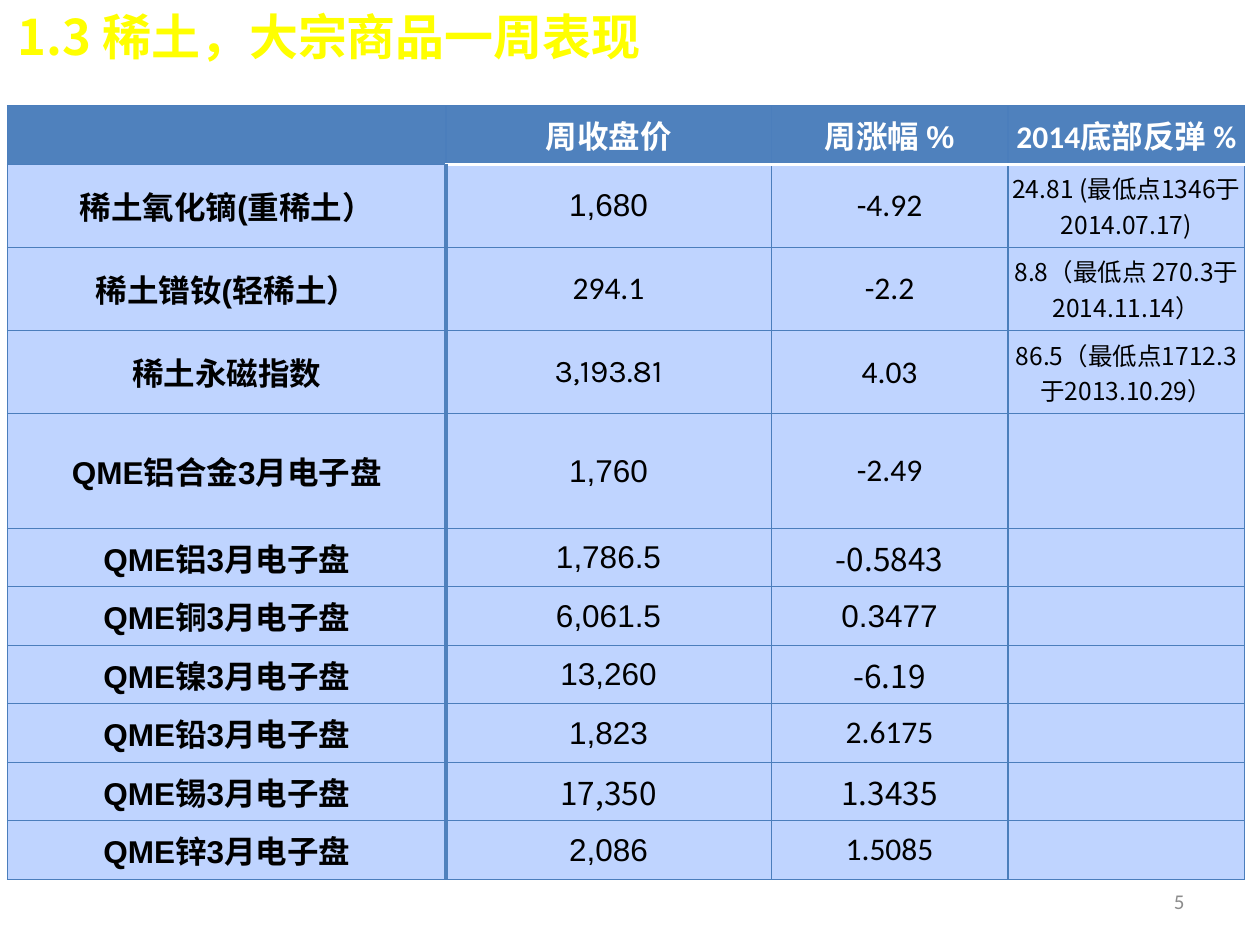
from dataclasses import dataclass
from typing import Optional

from lxml import etree
from pptx import Presentation
from pptx.dml.color import RGBColor
from pptx.enum.text import MSO_ANCHOR, PP_ALIGN
from pptx.oxml.ns import qn
from pptx.util import Inches, Pt

MIDDLE, TOP = MSO_ANCHOR.MIDDLE, MSO_ANCHOR.TOP
LEFT, CENTER, RIGHT = PP_ALIGN.LEFT, PP_ALIGN.CENTER, PP_ALIGN.RIGHT

WHITE = RGBColor(0xFF, 0xFF, 0xFF)
BLACK = RGBColor(0, 0, 0)
YELLOW = RGBColor(0xFF, 0xFF, 0)
GRAY = RGBColor(0x8C, 0x8C, 0x8C)
HEADER_BLUE = RGBColor(0x4F, 0x81, 0xBD)
GRID_BLUE = RGBColor(0x4B, 0x7E, 0xBC)
BODY_BLUE = RGBColor(0xBF, 0xD4, 0xFF)

ARIAL, CALIBRI, KARLA, NOTO = "Arial", "Calibri", "Karla", "Noto Sans CJK SC"

TABLE_LEFT, TABLE_TOP, TABLE_HEIGHT = 0.06, 0.84, 6.14
COLUMN_WIDTHS = (3.48, 2.58, 1.88, 1.88)
NOTE_ROW, ALLOY_ROW = 0.66, 0.91
PLAIN_ROW = (TABLE_HEIGHT - 3 * NOTE_ROW - ALLOY_ROW) / 7


@dataclass
class Style:
    font: str
    size: float = 18
    color: RGBColor = BLACK
    bold: bool = False
    align: PP_ALIGN = CENTER


@dataclass
class Quote:
    name: str
    price: str
    change: str
    price_font: str = ARIAL
    change_font: str = CALIBRI
    rebound: str = ""
    height: float = PLAIN_ROW


@dataclass
class Edge:
    color: RGBColor = GRID_BLUE
    width: float = 0.75


HEADERS = (
    ("", ARIAL),
    ("周收盘价", ARIAL),
    ("周涨幅 %", ARIAL),
    ("2014底部反弹 %", CALIBRI),
)
QUOTES = (
    Quote("稀土氧化镝(重稀土）", "1,680", "-4.92",
          rebound="24.81 (最低点1346于2014.07.17)", height=NOTE_ROW),
    Quote("稀土镨钕(轻稀土）", "294.1", "-2.2", CALIBRI,
          rebound="8.8（最低点 270.3于2014.11.14）", height=NOTE_ROW),
    Quote("稀土永磁指数", "3,193.81", "4.03", KARLA,
          rebound="86.5（最低点1712.3于2013.10.29）", height=NOTE_ROW),
    Quote("QME铝合金3月电子盘", "1,760", "-2.49", height=ALLOY_ROW),
    Quote("QME铝3月电子盘", "1,786.5", "-0.5843", change_font=NOTO),
    Quote("QME铜3月电子盘", "6,061.5", "0.3477", change_font=ARIAL),
    Quote("QME镍3月电子盘", "13,260", "-6.19", change_font=NOTO),
    Quote("QME铅3月电子盘", "1,823", "2.6175"),
    Quote("QME锡3月电子盘", "17,350", "1.3435", NOTO, NOTO),
    Quote("QME锌3月电子盘", "2,086", "1.5085"),
)


def write(frame, text: str, style: Style) -> None:
    para = frame.paragraphs[0]
    para.alignment = style.align
    if text:
        para.add_run().text = text
    font = para.font
    font.name, font.size, font.bold = style.font, Pt(style.size), style.bold
    font.color.rgb = style.color


def draw_edge(cell, side: str, edge: Edge) -> None:
    line = etree.Element(qn(f"a:{side}"), w=str(Pt(edge.width)))
    fill = etree.SubElement(line, qn("a:solidFill"))
    etree.SubElement(fill, qn("a:srgbClr"), val=str(edge.color))
    properties = cell._tc.get_or_add_tcPr()
    position = sum(child.tag.startswith(qn("a:ln")) for child in properties)
    properties.insert(position, line)


def fill_cell(cell, text: str, style: Style, fill: RGBColor,
              right: Optional[Edge] = None, left: Optional[Edge] = None,
              top: Optional[Edge] = None, bottom: Optional[Edge] = None) -> None:
    cell.margin_left = cell.margin_right = cell.margin_top = cell.margin_bottom = 0
    cell.vertical_anchor = MIDDLE
    cell.fill.solid()
    cell.fill.fore_color.rgb = fill
    write(cell.text_frame, text, style)
    for side, edge in zip(("lnL", "lnR", "lnT", "lnB"), (left, right, top, bottom)):
        draw_edge(cell, side, edge or Edge())


def add_quote_table(page) -> None:
    heights = [PLAIN_ROW] + [quote.height for quote in QUOTES]
    table = page.shapes.add_table(
        len(heights), len(COLUMN_WIDTHS), Inches(TABLE_LEFT), Inches(TABLE_TOP),
        Inches(sum(COLUMN_WIDTHS)), Inches(TABLE_HEIGHT)).table
    table.first_row = table.horz_banding = False
    for column, width in zip(table.columns, COLUMN_WIDTHS):
        column.width = Inches(width)
    for row, height in zip(table.rows, heights):
        row.height = Inches(height)

    header_rule, name_rule = Edge(WHITE, 2), Edge(HEADER_BLUE, 2)
    for column, (text, font) in enumerate(HEADERS):
        fill_cell(table.cell(0, column), text, Style(font, color=WHITE, bold=True),
                  HEADER_BLUE, bottom=header_rule if column else None)
    for row, quote in enumerate(QUOTES, start=1):
        entries = (
            (quote.name, Style(ARIAL, bold=True)),
            (quote.price, Style(quote.price_font)),
            (quote.change, Style(quote.change_font)),
            (quote.rebound, Style(NOTO, 14)),
        )
        for column, (text, style) in enumerate(entries):
            fill_cell(table.cell(row, column), text, style, BODY_BLUE,
                      right=name_rule if column == 0 else None,
                      left=name_rule if column == 1 else None,
                      top=header_rule if row == 1 and column else None)


def place_text(box, left: float, top: float, width: float, height: float,
               text: str, style: Style, anchor: MSO_ANCHOR) -> None:
    box.left, box.top = Inches(left), Inches(top)
    box.width, box.height = Inches(width), Inches(height)
    box.text_frame.word_wrap = True
    box.text_frame.vertical_anchor = anchor
    write(box.text_frame, text, style)


def main() -> None:
    deck = Presentation()
    deck.slide_width, deck.slide_height = Inches(10), Inches(7.5)
    page = deck.slides.add_slide(deck.slide_layouts[5])
    place_text(page.shapes.title, 0.04, 0, 9.45, 0.57, "1.3 稀土，大宗商品一周表现",
               Style(NOTO, 28, YELLOW, True, LEFT), TOP)
    add_quote_table(page)
    place_text(page.shapes.add_textbox(0, 0, 0, 0), 7.17, 6.95, 2.33, 0.4, "5",
               Style(CALIBRI, 12, GRAY, align=RIGHT), MIDDLE)
    deck.save("out.pptx")


if __name__ == "__main__":
    main()
